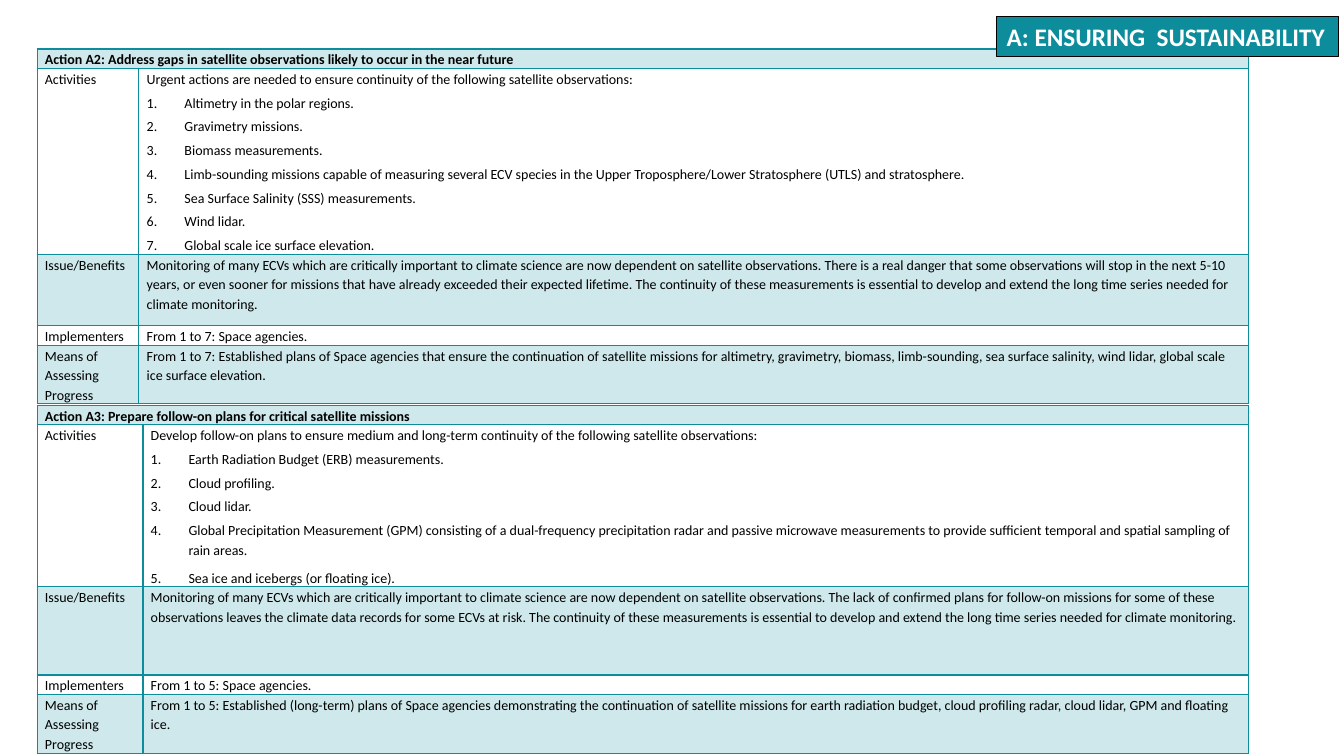
from lxml.etree import SubElement
from pptx import Presentation
from pptx.dml.color import RGBColor
from pptx.enum.shapes import MSO_SHAPE
from pptx.enum.text import MSO_ANCHOR, MSO_AUTO_SIZE, PP_ALIGN
from pptx.oxml import parse_xml
from pptx.oxml.ns import nsdecls, qn
from pptx.util import Pt

COLORS = {"teal": "0D8D9C", "text": "000000", "white": "FFFFFF"}
FONT = "Calibri"
TABLE_LEFT = 26.5
TABLE_WIDTH = 865.4
LABELS = ["Activities", "Issue/Benefits", "Implementers", "Means of Assessing Progress"]

ACTION_A2 = {
    "title": "Action A2: Address gaps in satellite observations likely to occur in the near future",
    "intro": "Urgent actions are needed to ensure continuity of the following satellite observations:",
    "activities": [
        "Altimetry in the polar regions.",
        "Gravimetry missions.",
        "Biomass measurements.",
        "Limb-sounding missions capable of measuring several ECV species in the Upper "
        "Troposphere/Lower Stratosphere (UTLS) and stratosphere.",
        "Sea Surface Salinity (SSS) measurements.",
        "Wind lidar.",
        "Global scale ice surface elevation.",
    ],
    "details": [
        "Monitoring of many ECVs which are critically important to climate science are now "
        "dependent on satellite observations. There is a real danger that some observations will "
        "stop in the next 5-10 years, or even sooner for missions that have already exceeded their "
        "expected lifetime. The continuity of these measurements is essential to develop and extend "
        "the long time series needed for climate monitoring.",
        "From 1 to 7: Space agencies.",
        "From 1 to 7: Established plans of Space agencies that ensure the continuation of satellite "
        "missions for altimetry, gravimetry, biomass, limb-sounding, sea surface salinity, wind "
        "lidar, global scale ice surface elevation.",
    ],
    "spaced_items": 0,
}
ACTION_A3 = {
    "title": "Action A3: Prepare follow-on plans for critical satellite missions",
    "intro": "Develop follow-on plans to ensure medium and long-term continuity of the following "
             "satellite observations:",
    "activities": [
        "Earth Radiation Budget (ERB) measurements.",
        "Cloud profiling.",
        "Cloud lidar.",
        "Global Precipitation Measurement (GPM) consisting of a dual-frequency precipitation radar "
        "and passive microwave measurements to provide sufficient temporal and spatial sampling of "
        "rain areas.",
        "Sea ice and icebergs (or floating ice).",
    ],
    "details": [
        "Monitoring of many ECVs which are critically important to climate science are now "
        "dependent on satellite observations. The lack of confirmed plans for follow-on missions "
        "for some of these observations leaves the climate data records for some ECVs at risk. The "
        "continuity of these measurements is essential to develop and extend the long time series "
        "needed for climate monitoring.",
        "From 1 to 5: Space agencies.",
        "From 1 to 5: Established (long-term) plans of Space agencies demonstrating the "
        "continuation of satellite missions for earth radiation budget, cloud profiling radar, "
        "cloud lidar, GPM and floating ice.",
    ],
    "spaced_items": 2,
}


def rgb(name):
    return RGBColor.from_string(COLORS[name])


def add_run(paragraph, words, size=10, color="text", bold=False):
    run = paragraph.add_run()
    run.text = words
    run.font.name = FONT
    run.font.size = Pt(size)
    run.font.bold = bold
    run.font.color.rgb = rgb(color)


def write(paragraph, words, before=3, after=0, bold=False):
    paragraph.line_spacing = 1.15
    paragraph.space_before = Pt(before)
    paragraph.space_after = Pt(after)
    add_run(paragraph, words, bold=bold)


def number(paragraph):
    properties = paragraph._p.get_or_add_pPr()
    properties.set("marL", str(Pt(27)))
    properties.set("indent", str(-Pt(27)))
    SubElement(properties, qn("a:buFont"), typeface="+mj-lt")
    SubElement(properties, qn("a:buAutoNum"), type="arabicPeriod")


def style_cell(cell, tinted):
    cell.margin_left = cell.margin_right = Pt(5.6)
    cell.margin_top = cell.margin_bottom = 0
    cell.vertical_anchor = MSO_ANCHOR.TOP
    properties = cell._tc.get_or_add_tcPr()
    if tinted:
        cell.fill.solid()
        cell.fill.fore_color.rgb = rgb("teal")
        tint = properties.find(".//" + qn("a:srgbClr"))
        SubElement(tint, qn("a:alpha"), val="20000")
    else:
        cell.fill.background()
    for position, side in enumerate(("lnL", "lnR", "lnT", "lnB")):
        border = parse_xml(
            f'<a:{side} {nsdecls("a")} w="{Pt(1)}"><a:solidFill>'
            f'<a:srgbClr val="{COLORS["teal"]}"/></a:solidFill></a:{side}>'
        )
        properties.insert(position, border)


def fill_activities(cell, action):
    write(cell.text_frame.paragraphs[0], action["intro"], before=6)
    first_spaced = len(action["activities"]) - action["spaced_items"]
    for position, activity in enumerate(action["activities"]):
        item = cell.text_frame.add_paragraph()
        write(item, activity, after=3 if position >= first_spaced else 0)
        number(item)


def add_action(slide, action, top, label_width, row_heights):
    frame = slide.shapes.add_table(
        len(row_heights), 2, Pt(TABLE_LEFT), Pt(top), Pt(TABLE_WIDTH), Pt(sum(row_heights))
    )
    table = frame.table
    table.first_row = table.horz_banding = False
    table.columns[0].width = Pt(label_width)
    table.columns[1].width = Pt(TABLE_WIDTH - label_width)
    for index, height in enumerate(row_heights):
        table.rows[index].height = Pt(height)
        for cell in table.rows[index].cells:
            style_cell(cell, tinted=index % 2 == 0)

    table.cell(0, 0).merge(table.cell(0, 1))
    write(table.cell(0, 0).text_frame.paragraphs[0], action["title"], after=3, bold=True)
    for index, label in enumerate(LABELS, start=1):
        write(table.cell(index, 0).text_frame.paragraphs[0], label)
    fill_activities(table.cell(1, 1), action)
    for index, detail in enumerate(action["details"], start=2):
        write(table.cell(index, 1).text_frame.paragraphs[0], detail, after=3)


def add_banner(slide, words):
    banner = slide.shapes.add_shape(MSO_SHAPE.RECTANGLE, Pt(712), Pt(11.5), Pt(244), Pt(29))
    banner.shadow.inherit = False
    banner.fill.solid()
    banner.fill.fore_color.rgb = rgb("teal")
    banner.line.color.rgb = rgb("text")
    banner.line.width = Pt(0.75)
    banner.text_frame.word_wrap = False
    banner.text_frame.auto_size = MSO_AUTO_SIZE.SHAPE_TO_FIT_TEXT
    heading = banner.text_frame.paragraphs[0]
    heading.alignment = PP_ALIGN.LEFT
    add_run(heading, words, size=18, color="white", bold=True)


def main():
    presentation = Presentation()
    presentation.slide_width = Pt(960)
    presentation.slide_height = Pt(540)
    slide = presentation.slides.add_slide(presentation.slide_layouts[6])
    add_action(slide, ACTION_A2, 35, 72.7, [14, 132.5, 51, 14, 41.5])
    add_action(slide, ACTION_A3, 289.5, 75.6, [14, 115, 63, 14, 41.5])
    add_banner(slide, "A: ENSURING  SUSTAINABILITY")
    presentation.save("out.pptx")


if __name__ == "__main__":
    main()
